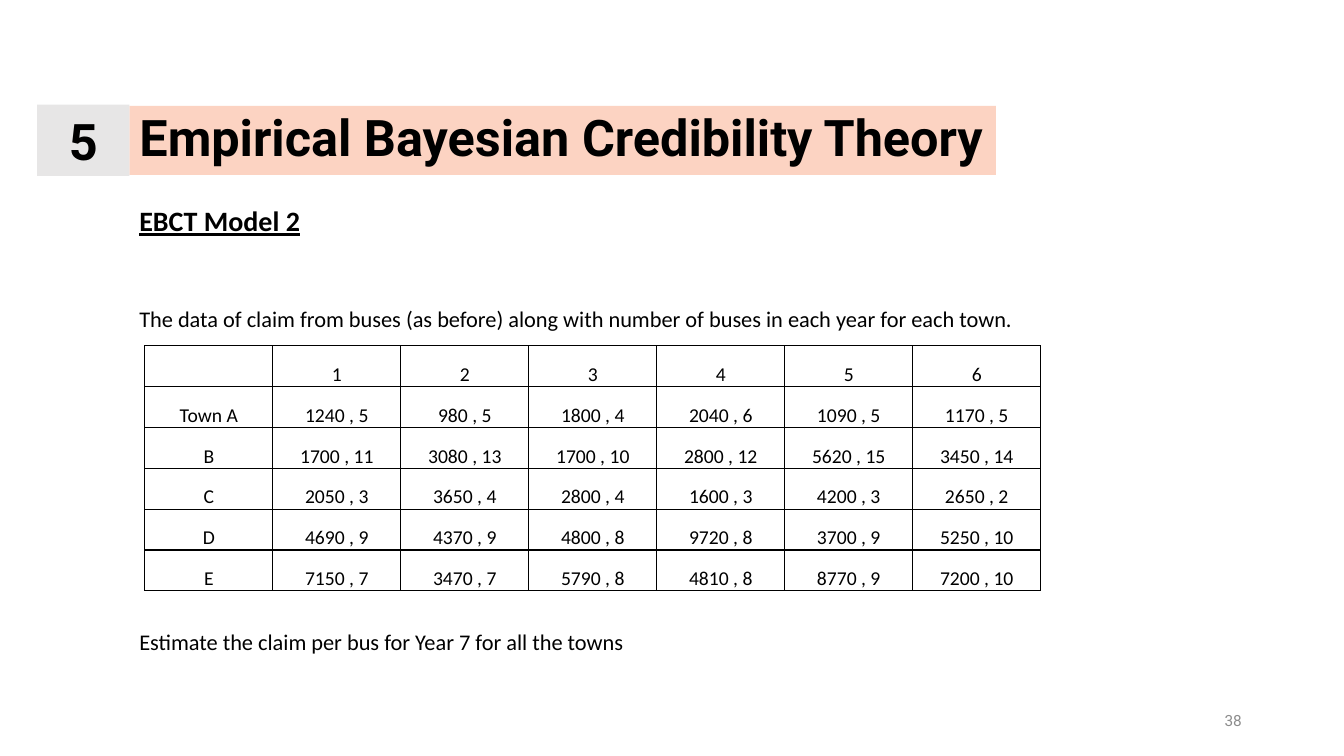
from lxml import etree
from pptx import Presentation
from pptx.dml.color import RGBColor
from pptx.enum.shapes import MSO_SHAPE
from pptx.enum.text import MSO_ANCHOR, PP_ALIGN
from pptx.oxml.ns import qn
from pptx.util import Pt

RECTANGLE = MSO_SHAPE.RECTANGLE
MIDDLE, BOTTOM = MSO_ANCHOR.MIDDLE, MSO_ANCHOR.BOTTOM
LEFT, CENTER, RIGHT = PP_ALIGN.LEFT, PP_ALIGN.CENTER, PP_ALIGN.RIGHT
COLORS = {"black": "000000", "peach": "FCD3C2", "light": "E7E6E6", "gray": "8C8C8C"}

CLAIMS = [
    ["", "1", "2", "3", "4", "5", "6"],
    ["Town A", "1240 , 5", "980 , 5", "1800 , 4", "2040 , 6", "1090 , 5", "1170 , 5"],
    ["B", "1700 , 11", "3080 , 13", "1700 , 10", "2800 , 12", "5620 , 15", "3450 , 14"],
    ["C", "2050 , 3", "3650 , 4", "2800 , 4", "1600 , 3", "4200 , 3", "2650 , 2"],
    ["D", "4690 , 9", "4370 , 9", "4800 , 8", "9720 , 8", "3700 , 9", "5250 , 10"],
    ["E", "7150 , 7", "3470 , 7", "5790 , 8", "4810 , 8", "8770 , 9", "7200 , 10"],
]
COLUMN_WIDTH, ROW_HEIGHT = 91.44, 29.17


def add_text(paragraph, text, size, font="Calibri", color="black", bold=False, align=LEFT):
    paragraph.alignment = align
    run = paragraph.add_run()
    run.text = text
    run.font.size = Pt(size)
    run.font.name = font
    run.font.bold = bold
    run.font.color.rgb = RGBColor.from_string(COLORS[color])
    return run


def add_borders(cell):
    properties = cell._tc.get_or_add_tcPr()
    for position, side in enumerate(("a:lnL", "a:lnR", "a:lnT", "a:lnB")):
        line = etree.Element(qn(side), w=str(Pt(1)))
        fill = etree.SubElement(line, qn("a:solidFill"))
        etree.SubElement(fill, qn("a:srgbClr"), val=COLORS["black"])
        properties.insert(position, line)


presentation = Presentation()
presentation.slide_width, presentation.slide_height = Pt(960), Pt(540)
slide = presentation.slides.add_slide(presentation.slide_layouts[5])

# Title and section number
title = slide.shapes.title
title.left, title.top, title.width, title.height = Pt(92.4), Pt(75.6), Pt(619), Pt(49.3)
title.fill.solid()
title.fill.fore_color.rgb = RGBColor.from_string(COLORS["peach"])
title.text_frame.vertical_anchor = MIDDLE
heading = title.text_frame.paragraphs[0]
heading.line_spacing = 0.9
add_text(heading, "Empirical Bayesian Credibility Theory", 36, "Roboto", bold=True)

section = slide.shapes.add_shape(RECTANGLE, Pt(26.6), Pt(74.7), Pt(65.8), Pt(50.9))
section.shadow.inherit = False
section.fill.solid()
section.fill.fore_color.rgb = RGBColor.from_string(COLORS["light"])
section.line.fill.background()
section.text_frame.vertical_anchor = MIDDLE
add_text(section.text_frame.paragraphs[0], "5", 36, "Roboto", bold=True, align=CENTER)

# Page number
page_number = slide.shapes.add_textbox(Pt(678.2), Pt(500.4), Pt(216), Pt(28.8))
page_number.text_frame.word_wrap = True
page_number.text_frame.vertical_anchor = MIDDLE
add_text(page_number.text_frame.paragraphs[0], "38", 11, "Roboto", "gray", align=RIGHT)

# Body text, with room for the table before the last line
body = slide.shapes.add_textbox(Pt(92.4), Pt(141.8), Pt(802), Pt(351.4))
body.text_frame.word_wrap = True
subtitle = add_text(body.text_frame.paragraphs[0], "EBCT Model 2", 20, bold=True)
subtitle.font.underline = True
for text, space_before in [
    ("The data of claim from buses (as before) along with number of buses "
     "in each year for each town.", 48.8),
    ("Estimate the claim per bus for Year 7 for all the towns", 211.2),
]:
    paragraph = body.text_frame.add_paragraph()
    paragraph.space_before = Pt(space_before)
    add_text(paragraph, text, 16)

# Claims and number of buses by town and year
row_count, column_count = len(CLAIMS), len(CLAIMS[0])
table = slide.shapes.add_table(
    row_count, column_count, Pt(103.5), Pt(247),
    Pt(COLUMN_WIDTH * column_count), Pt(ROW_HEIGHT * row_count)).table
table.first_row = table.horz_banding = False
for column in table.columns:
    column.width = Pt(COLUMN_WIDTH)
for row, values in zip(table.rows, CLAIMS):
    row.height = Pt(ROW_HEIGHT)
    for cell, value in zip(row.cells, values):
        cell.fill.background()
        cell.vertical_anchor = BOTTOM
        cell.margin_left = cell.margin_right = cell.margin_top = Pt(0.7)
        cell.margin_bottom = 0
        add_borders(cell)
        if value:
            add_text(cell.text_frame.paragraphs[0], value, 14, align=CENTER)

presentation.save("out.pptx")
